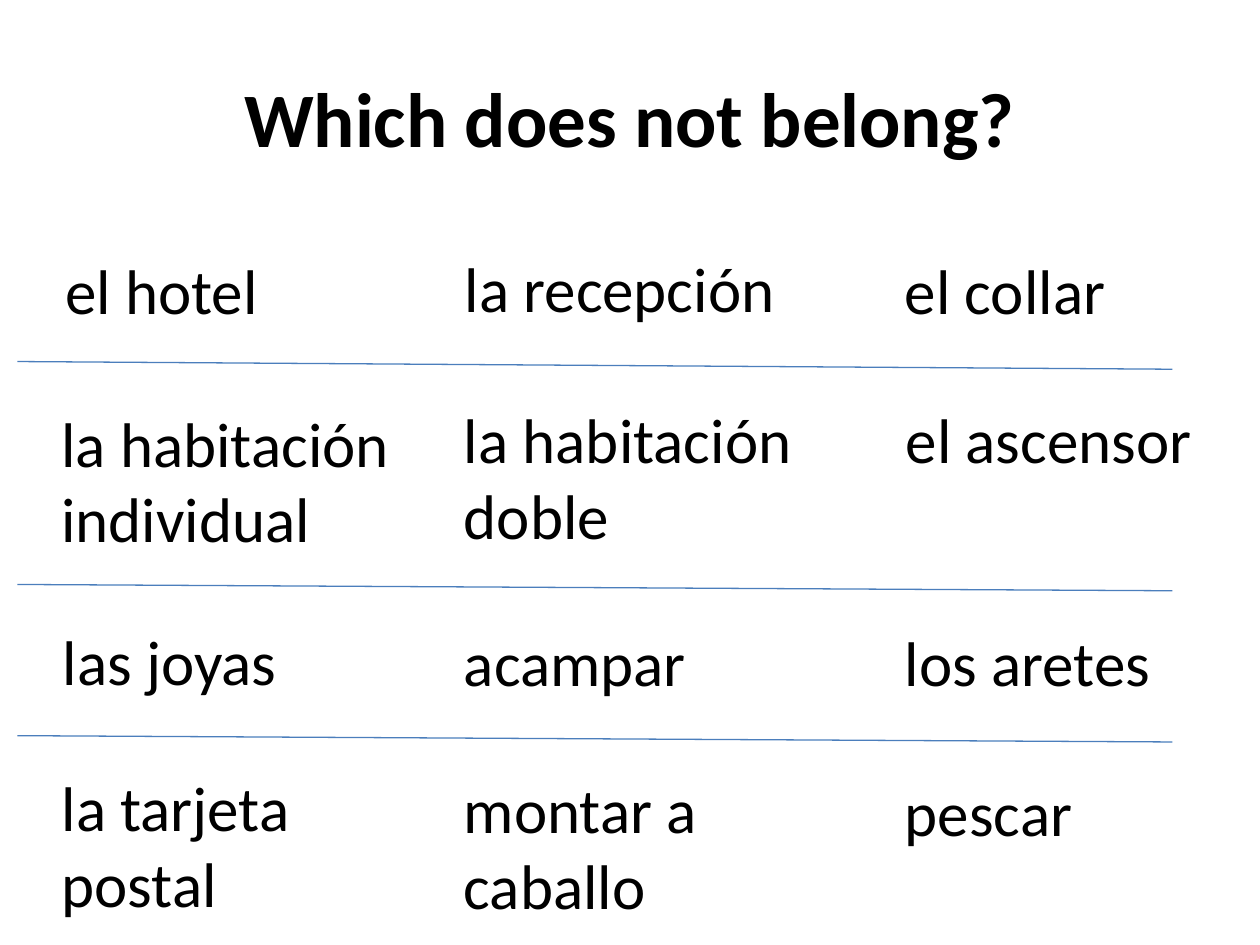
from lxml.etree import SubElement
from pptx import Presentation
from pptx.dml.color import RGBColor
from pptx.enum.shapes import MSO_CONNECTOR
from pptx.enum.text import MSO_ANCHOR, MSO_AUTO_SIZE, PP_ALIGN
from pptx.oxml.ns import qn
from pptx.util import Pt

COLS = (28, 258, 510)
ROWS = (139, 225.5, 352.5, 436)
RULES = ((206.6, 4.4), (334, 3.6), (420.4, 3.6))
WORDS = (
    (("el hotel", 2.2, 1.4, 125.3), ("la recepción", 0.5, 0, 193), ("el collar", 0, 1.4, 130.3)),
    (("la habitación\nindividual", 0, 2, 211.7), ("la habitación\ndoble", 0, 0, 211.7),
     ("el ascensor", 0.5, 0, 179.3)),
    (("las joyas", 0.8, -0.5, 138.2), ("acampar", 0, 0.3, 142.6), ("los aretes", 0, 0.3, 156.2)),
    (("la tarjeta postal", 0, -0.4, 230.4), ("montar a\ncaballo", 0, 1, 157),
     ("pescar", 0, 2.5, 110.9)),
)


def paint(color, tint):
    """Set a colour from a hex string."""
    color.rgb = RGBColor.from_string(tint)


def place(shape, left, top, width, height):
    """Move and size a shape in points."""
    shape.left, shape.top = Pt(left), Pt(top)
    shape.width, shape.height = Pt(width), Pt(height)


def style(frame, size, bold=False, align=PP_ALIGN.LEFT):
    """Format every paragraph of a text frame."""
    for para in frame.paragraphs:
        para.alignment = align
        font = para.font
        font.name, font.size, font.bold = "Calibri", Pt(size), bold
        paint(font.color, "000000")


def head(slide, left, top, width, height):
    """Fill the title placeholder."""
    title = slide.shapes.title
    place(title, left, top, width, height)
    frame = title.text_frame
    frame.text = "Which does not belong?"
    frame.vertical_anchor = MSO_ANCHOR.MIDDLE
    style(frame, 44, True, PP_ALIGN.CENTER)


def body(slide, text, left, top, width, height):
    """Fill the body placeholder with one plain entry."""
    shape = slide.placeholders[1]
    place(shape, left, top, width, height)
    frame = shape.text_frame
    frame.text = text
    frame.auto_size = MSO_AUTO_SIZE.NONE
    style(frame, 36)
    props = frame.paragraphs[0]._p.get_or_add_pPr()
    props.set("marL", "0")
    props.set("indent", "0")
    props.insert_element_before(props.makeelement(qn("a:buNone")), "a:defRPr")


def label(slide, text, left, top, width):
    """Add a word that keeps its own line breaks."""
    high = 51 + 43.2 * text.count("\n")
    frame = slide.shapes.add_textbox(Pt(left), Pt(top), Pt(width), Pt(high)).text_frame
    frame.text = text
    frame.word_wrap = False
    frame.auto_size = MSO_AUTO_SIZE.SHAPE_TO_FIT_TEXT
    style(frame, 36)


def rule(slide, left, top, width, drop):
    """Draw a slightly falling line between two rows."""
    line = slide.shapes.add_connector(
        MSO_CONNECTOR.STRAIGHT, Pt(left), Pt(top), Pt(left + width), Pt(top + drop))
    line.line.width = Pt(0.75)
    paint(line.line.color, "4B7EBC")
    SubElement(line._element.spPr, qn("a:effectLst"))


def grid(slide, left, top):
    """Lay out the words in rows and columns with rules between."""
    for row, (y, words) in enumerate(zip(ROWS, WORDS)):
        for col, (x, (text, dx, dy, width)) in enumerate(zip(COLS, words)):
            spot = left + x + dx, top + y + dy, width
            if (row, col) == (3, 0):
                body(slide, text, *spot, 56)
            else:
                label(slide, text, *spot)
    for y, drop in RULES:
        rule(slide, left + 10, top + y, 660, drop)


def main():
    """Build and save the slide."""
    deck = Presentation()
    deck.slide_width, deck.slide_height = Pt(720), Pt(540)
    slide = deck.slides.add_slide(deck.slide_layouts[1])
    head(slide, 36, 21.6, 648, 90)
    grid(slide, 0, 0)
    deck.save("out.pptx")


if __name__ == "__main__":
    main()
